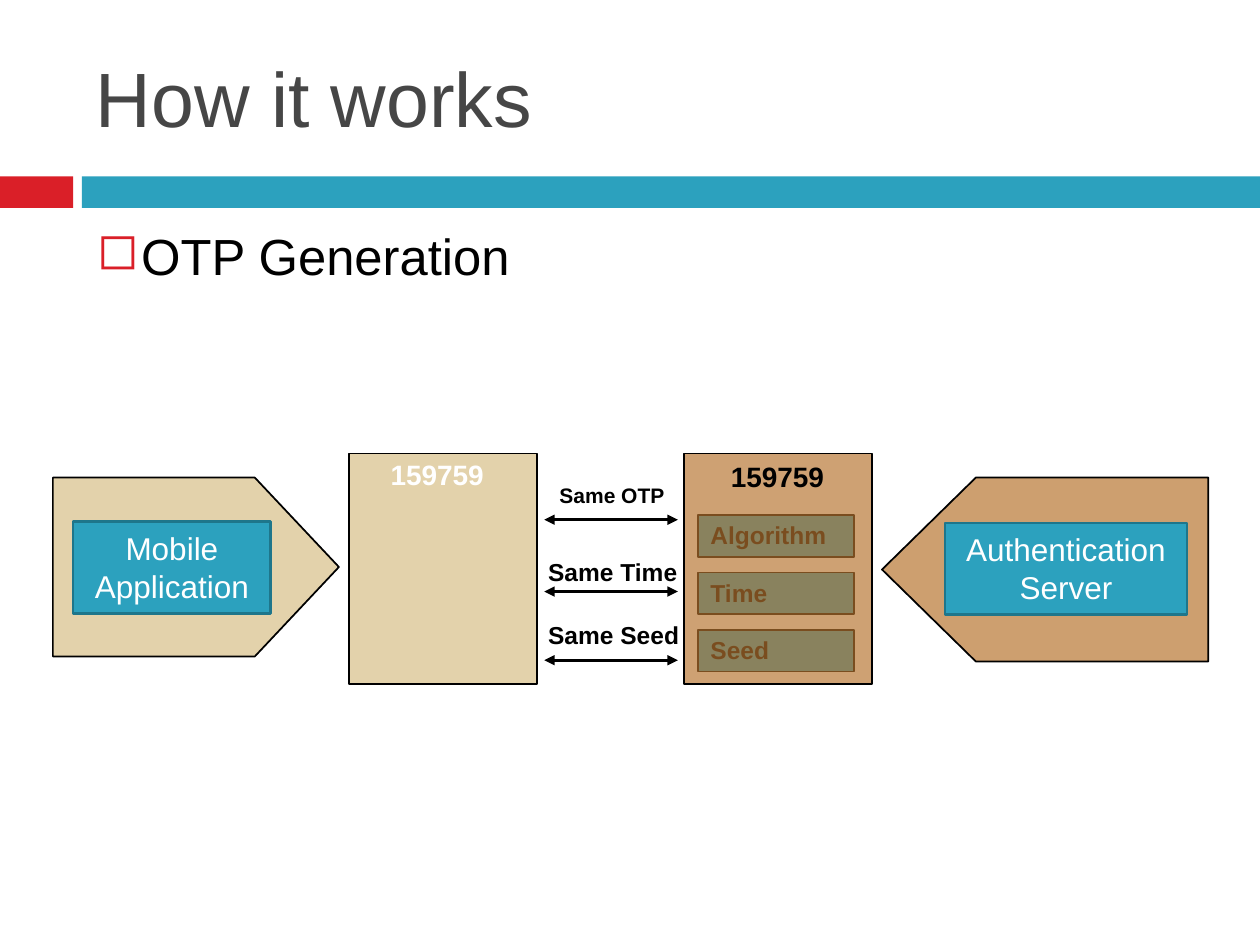
"""Build the slide that shows how a one-time password is checked."""
import dataclasses

import lxml.etree
import pptx
import pptx.dml.color
import pptx.enum.shapes
import pptx.enum.text
import pptx.oxml.ns
import pptx.util

KIND = pptx.enum.shapes.MSO_SHAPE
ALIGN = pptx.enum.text.PP_ALIGN
qn = pptx.oxml.ns.qn


@dataclasses.dataclass(frozen=True)
class Theme:
    font: str = "Arial"
    red: str = "DA1F28"
    teal: str = "2CA1BE"
    edge: str = "1E768B"
    sand: str = "E3D2AB"
    brown: str = "B7742F"
    gray: str = "464646"
    black: str = "000000"
    white: str = "FFFFFF"
    title: int = 44
    body: int = 29
    name: int = 18
    code: int = 16
    label: int = 14
    small: int = 12


def color(code):
    return pptx.dml.color.RGBColor.from_string(code)


def add(node, tag, **attrs):
    return lxml.etree.SubElement(node, qn(tag), attrs)


def set_text(frame, text, *, font, size, ink, bold=False, left=0, top=0.01,
             align=ALIGN.LEFT, wrap=True, bullet=None):
    frame.auto_size = pptx.enum.text.MSO_AUTO_SIZE.NONE
    frame.word_wrap = wrap
    frame.vertical_anchor = pptx.enum.text.MSO_ANCHOR.TOP
    frame.margin_left = pptx.util.Inches(left)
    frame.margin_top = pptx.util.Inches(top)
    frame.margin_right = frame.margin_bottom = 0
    frame.text = text
    for para in frame.paragraphs:
        para.alignment = align
        if bullet:
            props = para._p.get_or_add_pPr()
            props.set("marL", str(pptx.util.Inches(0.36)))
            props.set("indent", str(pptx.util.Inches(-0.35)))
            add(add(props, "a:buClr"), "a:srgbClr", val=bullet)
            add(props, "a:buChar", char="◻")
        para.font.name = font
        para.font.size = pptx.util.Pt(size)
        para.font.bold = bold
        para.font.color.rgb = color(ink)


class Deck:
    """Hold the style and the slide, on a grid of 100 columns by 75 rows."""

    def __init__(self, theme):
        self.theme = theme
        self.show = pptx.Presentation()
        self.show.slide_width = pptx.util.Inches(10)
        self.show.slide_height = pptx.util.Inches(7.5)
        self.slide = self.show.slides.add_slide(self.show.slide_layouts[5])

    def grid(self, *spans):
        unit = self.show.slide_width / 100
        return [round(span * unit) for span in spans]

    def words(self, frame, text, **form):
        base = {"font": self.theme.font, "ink": self.theme.black}
        set_text(frame, text, **{**base, **form})

    def title(self, text, *area):
        shape = self.slide.shapes.title
        shape.left, shape.top, shape.width, shape.height = self.grid(*area)
        self.words(shape.text_frame, text, size=self.theme.title,
                   ink=self.theme.gray, wrap=False)

    def text(self, text, *area, **form):
        box = self.slide.shapes.add_textbox(*self.grid(*area))
        self.words(box.text_frame, text, wrap=False, **form)

    def shape(self, *area, fill, line=None, width=1, kind=KIND.RECTANGLE,
              alpha=None, text=None, **form):
        shape = self.slide.shapes.add_shape(kind, *self.grid(*area))
        shape.shadow.inherit = False
        shape.fill.solid()
        shape.fill.fore_color.rgb = color(fill)
        if alpha:
            tint = shape.element.spPr.find(qn("a:solidFill"))[0]
            add(tint, "a:alpha", val=str(alpha * 1000))
        if line:
            shape.line.color.rgb = color(line)
            shape.line.width = pptx.util.Pt(width)
        else:
            shape.line.fill.background()
        if text:
            self.words(shape.text_frame, text, **form)
        return shape

    def house(self, *area, tip, turn=0, **look):
        shape = self.shape(*area, kind=KIND.PENTAGON, line=self.theme.black, **look)
        shape.adjustments[0] = tip
        shape.rotation = turn

    def badge(self, text, *area):
        self.shape(*area, fill=self.theme.teal, line=self.theme.edge, width=1.5,
                   text=text, size=self.theme.name, ink=self.theme.white,
                   top=0.06, align=ALIGN.CENTER)

    def arrow(self, left, right, row):
        link = self.slide.shapes.add_connector(
            pptx.enum.shapes.MSO_CONNECTOR.STRAIGHT, *self.grid(left, row, right, row))
        link.line.color.rgb = color(self.theme.black)
        link.line.width = pptx.util.Pt(1.75)
        props = link.element.spPr
        line = props.find(qn("a:ln"))
        for end in ("a:headEnd", "a:tailEnd"):
            add(line, end, type="triangle", w="med", len="med")
        add(props, "a:effectLst")


def main():
    theme = Theme()
    deck = Deck(theme)
    deck.shape(0, 14, 5.8, 2.5, fill=theme.red)
    deck.shape(6.5, 14, 93.5, 2.5, fill=theme.teal)
    deck.title("How it works", 7.6, 3.9, 34.9, 7.6)
    deck.text("OTP Generation", 7.6, 17.7, 33.1, 5.1, size=theme.body, bullet=theme.red)

    deck.house(70, 37.9, 25.9, 14.6, tip=0.51, turn=180, fill=theme.brown, alpha=69)
    deck.house(4.2, 37.9, 22.7, 14.2, tip=0.47, fill=theme.sand)

    for step, text in enumerate(("Algorithm", "Time", "Seed")):
        deck.shape(55.4, 40.9 + 4.55 * step, 12.4, 3.3, fill=theme.teal,
                   line=theme.black, text=text, size=theme.label, bold=True,
                   left=0.1, top=0.04)

    panel = dict(line=theme.black, text="159759", size=theme.code, bold=True)
    deck.shape(27.7, 36, 14.9, 18.3, fill=theme.sand, ink=theme.white,
               left=0.33, top=0.03, **panel)
    deck.shape(54.3, 36, 14.9, 18.3, fill=theme.brown, alpha=67,
               left=0.37, top=0.05, **panel)

    for text, left, top, size, row in (
            ("Same OTP", 44.4, 38.2, theme.small, 41.25),
            ("Same Time", 43.5, 44.1, theme.label, 46.95),
            ("Same Seed", 43.5, 49.1, theme.label, 52.4)):
        deck.text(text, left, top, 10.5, 2.6, size=size, bold=True)
        deck.arrow(43.2, 53.8, row)

    deck.badge("Mobile\nApplication", 5.8, 41.4, 15.7, 7.3)
    deck.badge("Authentication\nServer", 75, 41.5, 19.2, 7.3)
    deck.show.save("out.pptx")


if __name__ == "__main__":
    main()
